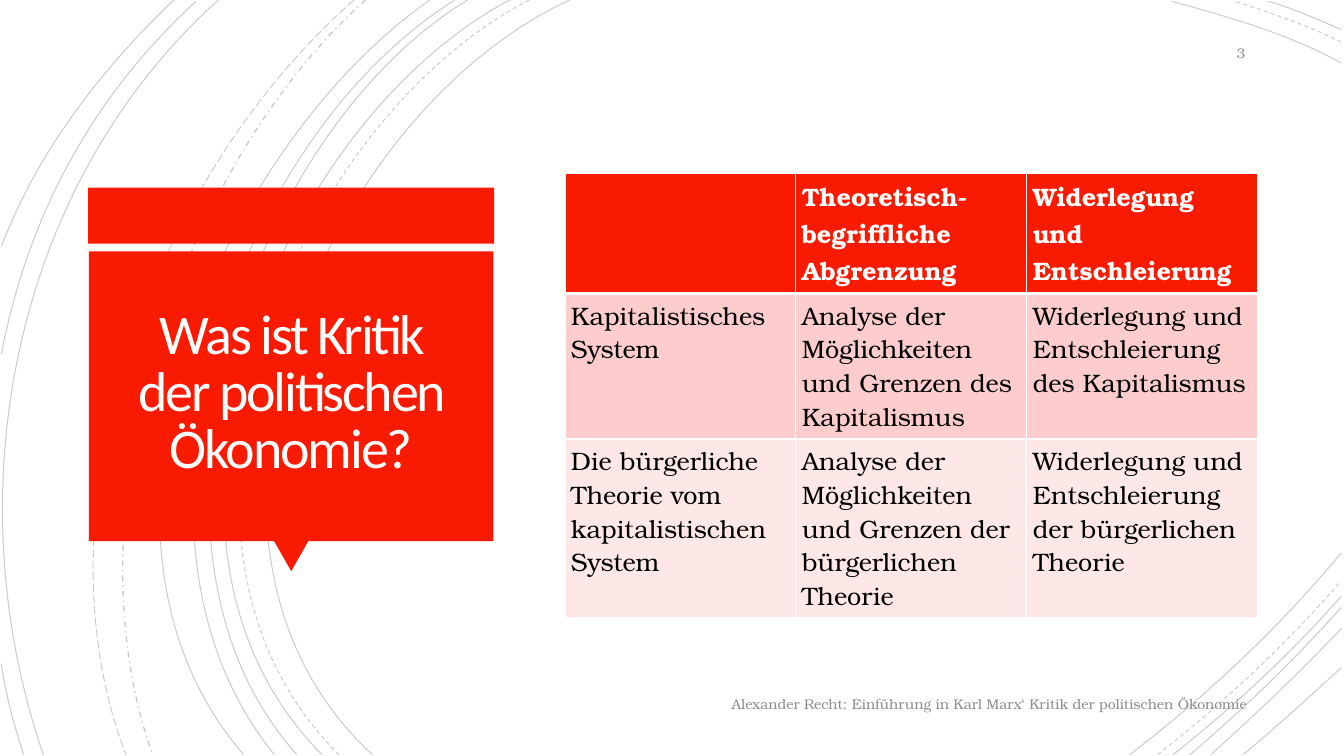
from dataclasses import dataclass

from lxml import etree
from pptx import Presentation
from pptx.dml.color import RGBColor
from pptx.enum.dml import MSO_LINE
from pptx.enum.shapes import MSO_SHAPE
from pptx.enum.text import MSO_ANCHOR, MSO_AUTO_SIZE, PP_ALIGN
from pptx.oxml.ns import qn
from pptx.util import Pt

RECTANGLE, TRIANGLE = MSO_SHAPE.RECTANGLE, MSO_SHAPE.ISOSCELES_TRIANGLE
SOLID, DASH = MSO_LINE.SOLID, MSO_LINE.DASH
LONG_DASH, DASH_DOT = MSO_LINE.LONG_DASH, MSO_LINE.DASH_DOT
MIDDLE, TOP = MSO_ANCHOR.MIDDLE, MSO_ANCHOR.TOP
LEFT, CENTER, RIGHT = PP_ALIGN.LEFT, PP_ALIGN.CENTER, PP_ALIGN.RIGHT
NO_AUTOFIT = MSO_AUTO_SIZE.NONE


@dataclass(frozen=True)
class Theme:
    red: str = "F81B02"
    pink: str = "FCCDCC"
    pale_pink: str = "FEE8E7"
    white: str = "FFFFFF"
    title_white: str = "FFFEFF"
    black: str = "000000"
    grey: str = "8C8C8C"
    heading_font: str = "Calibri"
    body_font: str = "TeX Gyre Bonum"
    title_size: int = 40
    table_size: int = 18
    footer_size: int = 10


THEME = Theme()
SLIDE_WIDTH, SLIDE_HEIGHT = 960, 540
ARC_BOTTOM, ARC_RIGHT = 539, 958

SWEEPS = [
    (407, (227, 83), (103, 389), 266, SOLID),
    (378, (205, 90), (89, 387), 242, DASH),
    (364, (194, 91), (79, 387), 230, SOLID),
    (334, (176, 96), (79, 390), 212, SOLID),
    (325, (166, 99), (70, 384), 196, SOLID),
    (307, (156, 106), (38, 381), 174, SOLID),
    (261, (127, 120), (47, 366), 109, DASH_DOT),
    (253, (113, 122), (21, 359), 90, LONG_DASH),
    (156, (8, 133), (-33, 353), 31, SOLID),
]
LEFT_EDGE_ARCS = [
    ((140, 1), (66, 69), (20, 154), (1, 253)),
    ((1, 474), (4, 496), (10, 518), (17, ARC_BOTTOM)),
    ((124, 0), (72, 50), (27, 108), (1, 176)),
]
TOP_CORNER_ARCS = [
    (45, (920, 24), (877, 12), 837, SOLID),
    (30, (934, 18), (907, 9), 882, DASH),
    (21, (941, 14), (924, 6), 906, SOLID),
]
BOTTOM_CORNER_ARCS = [
    (807, (862, 497), (914, 448), 395, SOLID),
    (827, (873, 503), (918, 461), 415, DASH),
    (838, (881, 505), (922, 467), 426, SOLID),
    (850, (888, 507), (924, 472), 434, SOLID),
    (865, (897, 510), (929, 480), 449, SOLID),
    (888, (912, 519), (935, 498), 477, SOLID),
]
TABLE_ROWS = [
    ("", "Theoretisch-begriffliche Abgrenzung", "Widerlegung und Entschleierung"),
    ("Kapitalistisches System",
     "Analyse der Möglichkeiten und Grenzen des Kapitalismus",
     "Widerlegung und Entschleierung des Kapitalismus"),
    ("Die bürgerliche Theorie vom kapitalistischen System",
     "Analyse der Möglichkeiten und Grenzen der bürgerlichen Theorie",
     "Widerlegung und Entschleierung der bürgerlichen Theorie"),
]
ROW_HEIGHTS = (85, 104, 127)
COLUMN_WIDTH = 165


def apply_format(target, values):
    """Set each named attribute of the target."""
    for name, value in values.items():
        setattr(target, name, value)


def write_text(frame, text, font, size, color, align, bold=False):
    """Write one formatted paragraph and return it."""
    paragraph = frame.paragraphs[0]
    paragraph.alignment = align
    run = paragraph.add_run()
    run.text = text
    apply_format(run.font, {"name": font, "size": Pt(size), "bold": bold})
    run.font.color.rgb = RGBColor.from_string(color)
    return paragraph


def add_arc(slide, points, dash=SOLID):
    """Draw a faint cubic curve from a start, two controls and an end."""
    builder = slide.shapes.build_freeform(*points[0], scale=Pt(1))
    builder.add_line_segments(points[1:], close=False)
    arc = builder.convert_to_shape()
    outline = next(arc._element.iter(qn("a:path")))
    curve = etree.SubElement(outline, qn("a:cubicBezTo"))
    for segment in outline.findall(qn("a:lnTo")):
        curve.append(segment[0])
        outline.remove(segment)
    arc.shadow.inherit = False
    arc.fill.background()
    arc.line.color.rgb = RGBColor.from_string(THEME.black)
    apply_format(arc.line, {"width": Pt(1 if dash == DASH_DOT else 0.75),
                            "dash_style": dash})
    color = next(arc.line._ln.iter(qn("a:srgbClr")))
    etree.SubElement(color, qn("a:alpha"), val="20000")


def add_background_arcs(slide):
    """Draw the sweeping curves behind the content."""
    for start, first, second, end, dash in SWEEPS:
        add_arc(slide, [(start, 0), first, second, (end, ARC_BOTTOM)], dash)
    for points in LEFT_EDGE_ARCS:
        add_arc(slide, points)
    for start, first, second, end, dash in TOP_CORNER_ARCS:
        add_arc(slide, [(ARC_RIGHT, start), first, second, (end, 1)], dash)
    for start, first, second, end, dash in BOTTOM_CORNER_ARCS:
        add_arc(slide, [(start, ARC_BOTTOM), first, second, (ARC_RIGHT, end)], dash)


def add_panel(slide, preset, box, rotation=0):
    """Add one red piece of the title callout."""
    panel = slide.shapes.add_shape(preset, *map(Pt, box))
    panel.shadow.inherit = False
    panel.fill.solid()
    panel.fill.fore_color.rgb = RGBColor.from_string(THEME.red)
    panel.line.fill.background()
    panel.rotation = rotation


def place_title(slide, text, box):
    """Format the title placeholder and bring it to the front."""
    title = slide.shapes.title
    apply_format(title, dict(zip(("left", "top", "width", "height"), map(Pt, box))))
    frame = title.text_frame
    apply_format(frame, {"word_wrap": True, "auto_size": NO_AUTOFIT,
                         "vertical_anchor": MIDDLE})
    apply_format(frame, {f"margin_{side}": Pt(18)
                         for side in ("left", "top", "right", "bottom")})
    heading = write_text(frame, text, THEME.heading_font, THEME.title_size,
                         THEME.title_white, CENTER)
    heading.line_spacing = 0.85
    heading.runs[0].font._element.set("spc", "-150")
    slide.shapes._spTree.append(title._element)


def set_borders(cell, widths):
    """Draw white borders of the given widths around a cell."""
    properties = cell._tc.get_or_add_tcPr()
    for side, width in widths.items():
        border = etree.SubElement(properties, qn(f"a:ln{side}"), w=str(Pt(width)))
        fill = etree.SubElement(border, qn("a:solidFill"))
        etree.SubElement(fill, qn("a:srgbClr"), val=THEME.white)


def add_comparison_table(slide, left, top):
    """Add the table that compares the two objects of critique."""
    table = slide.shapes.add_table(
        len(TABLE_ROWS), len(TABLE_ROWS[0]), Pt(left), Pt(top),
        Pt(COLUMN_WIDTH * len(TABLE_ROWS[0])), Pt(sum(ROW_HEIGHTS))).table
    for column in table.columns:
        column.width = Pt(COLUMN_WIDTH)
    fills = (THEME.red, THEME.pink, THEME.pale_pink)
    for r, (texts, height, fill) in enumerate(zip(TABLE_ROWS, ROW_HEIGHTS, fills)):
        table.rows[r].height = Pt(height)
        header = r == 0
        for c, text in enumerate(texts):
            cell = table.cell(r, c)
            apply_format(cell, {"margin_left": Pt(4.3), "margin_right": Pt(4.3),
                                "margin_top": Pt(3.6), "margin_bottom": Pt(3.6),
                                "vertical_anchor": TOP})
            set_borders(cell, {"L": 1, "R": 1, "T": 3 if r == 1 else 1,
                               "B": 3 if header else 1})
            cell.fill.solid()
            cell.fill.fore_color.rgb = RGBColor.from_string(fill)
            if text:
                write_text(cell.text_frame, text, THEME.body_font, THEME.table_size,
                           THEME.white if header else THEME.black, LEFT, header)


def add_margin_note(slide, text, box):
    """Add a small grey right-aligned line of text."""
    frame = slide.shapes.add_textbox(*map(Pt, box)).text_frame
    apply_format(frame, {"word_wrap": True, "vertical_anchor": MIDDLE})
    write_text(frame, text, THEME.body_font, THEME.footer_size, THEME.grey, RIGHT)


def main():
    """Build and save the slide."""
    deck = Presentation()
    apply_format(deck, {"slide_width": Pt(SLIDE_WIDTH), "slide_height": Pt(SLIDE_HEIGHT)})
    slide = deck.slides.add_slide(deck.slide_layouts[5])
    add_background_arcs(slide)
    add_panel(slide, RECTANGLE, (63, 134, 290, 40))
    add_panel(slide, TRIANGLE, (195.5, 386, 25, 22), 180)
    add_panel(slide, RECTANGLE, (63.5, 179.5, 289, 207))
    place_title(slide, "Was ist Kritik der politischen Ökonomie?", (70, 185, 276, 194))
    add_comparison_table(slide, 403.5, 123.5)
    add_margin_note(slide, "3", (824.5, 25, 72, 25))
    add_margin_note(
        slide, "Alexander Recht: Einführung in Karl Marx‘ Kritik der politischen Ökonomie",
        (63.5, 490.5, 834, 25))
    deck.save("out.pptx")


if __name__ == "__main__":
    main()
